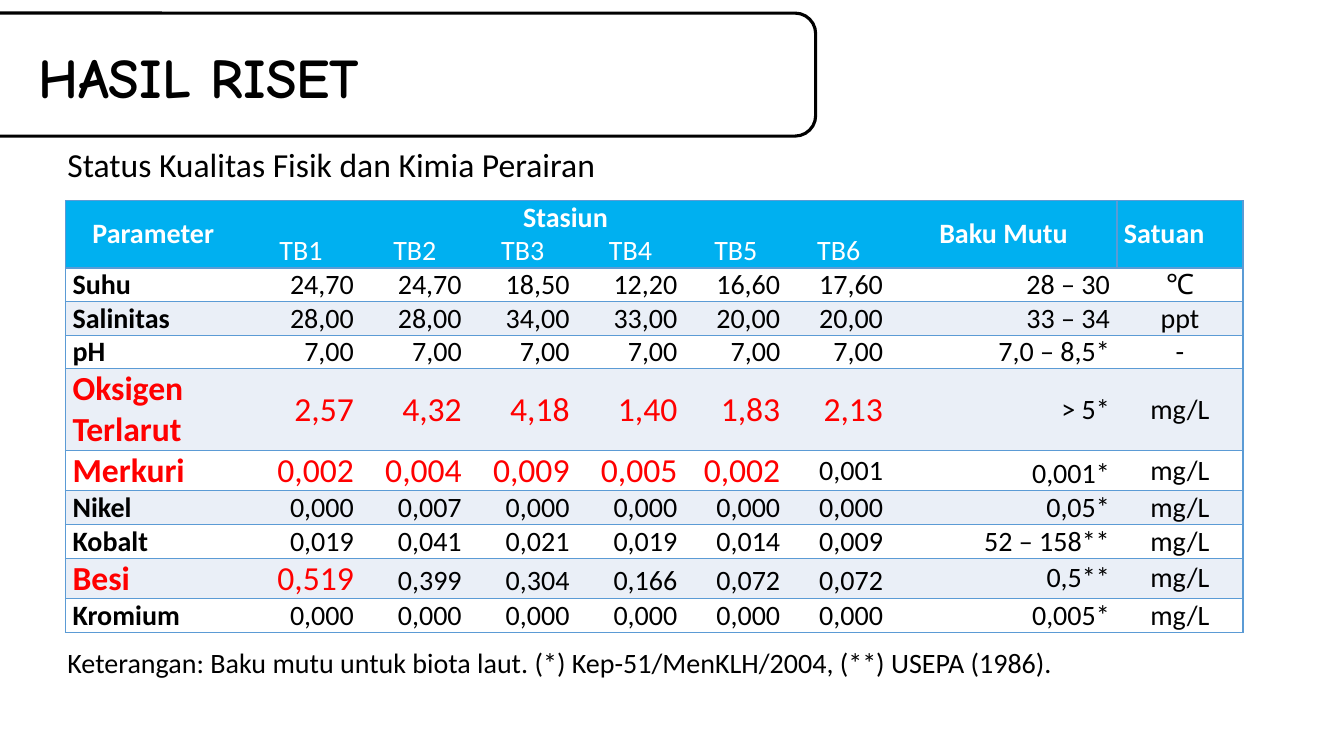
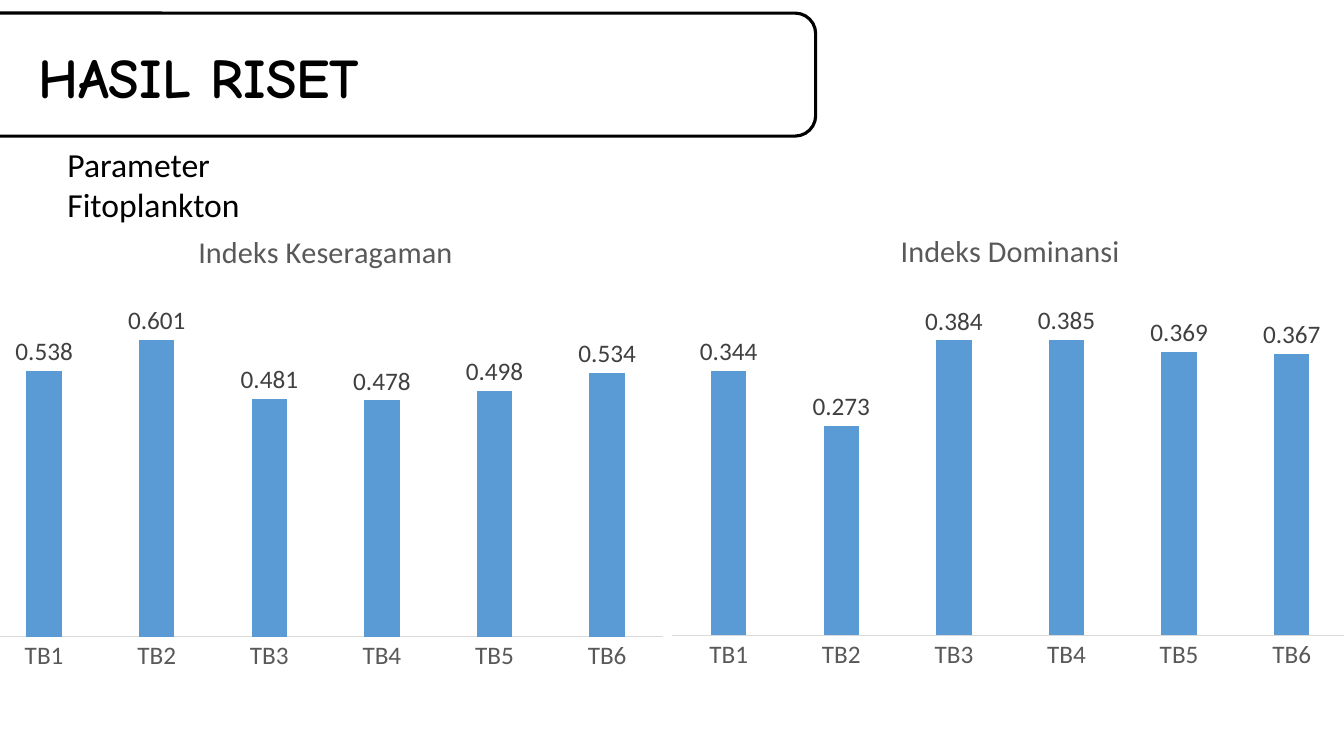
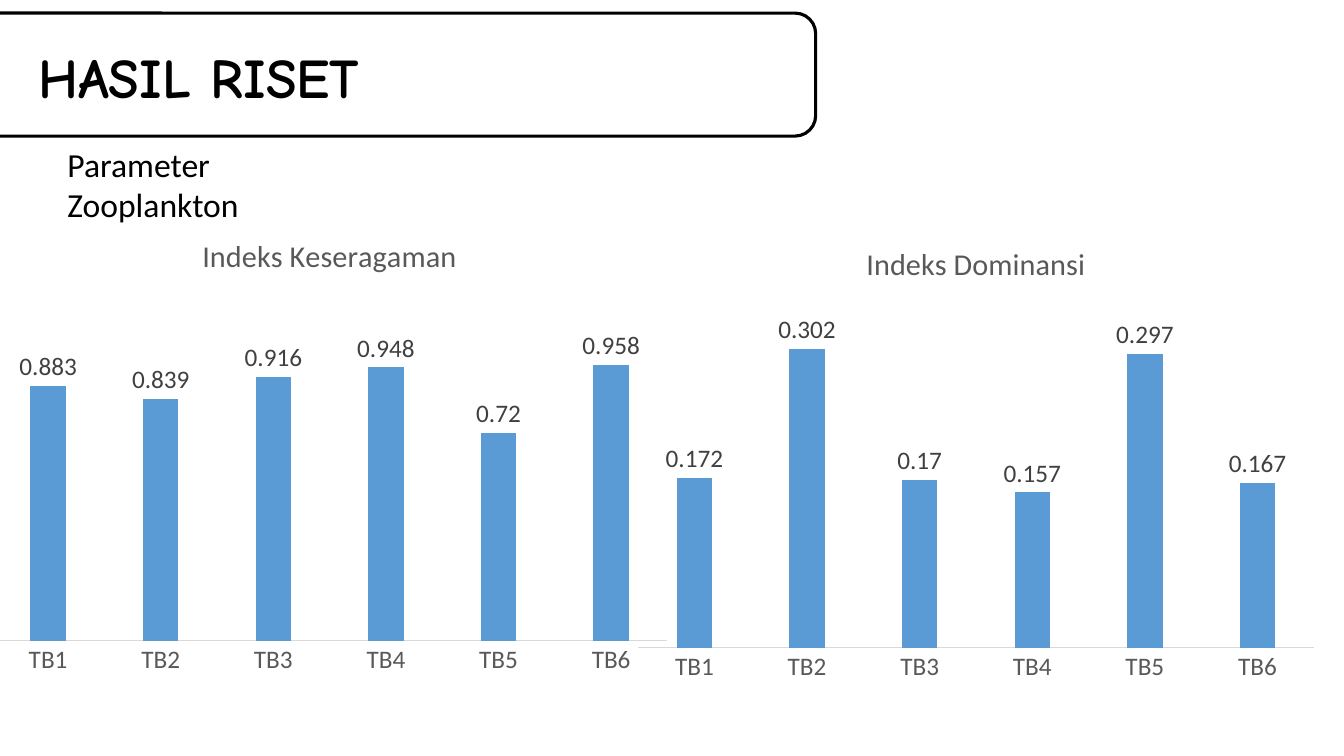
from lxml.etree import SubElement
from pptx import Presentation
from pptx.chart.data import CategoryChartData
from pptx.dml.color import RGBColor
from pptx.enum.chart import XL_CHART_TYPE, XL_LABEL_POSITION, XL_TICK_LABEL_POSITION, XL_TICK_MARK
from pptx.enum.shapes import MSO_SHAPE
from pptx.enum.text import MSO_ANCHOR, PP_ALIGN
from pptx.oxml.ns import qn
from pptx.util import Inches, Pt

BODY_FONT, TITLE_FONT = "Calibri", "Comic Neue"
BLACK, WHITE, RED = "000000", "FFFFFF", "FF0000"
HEADER_FILL, BAND_FILL, BLUE = "00B0F0", "EAEFF7", "5B9BD5"
AXIS_TEXT, LABEL_TEXT, AXIS_LINE = "595959", "404040", "D9D9D9"
PLAIN_TABLE_STYLE = "{2D5ABB26-0587-4C30-8999-92F81FD0307C}"

STATIONS = ["TB1", "TB2", "TB3", "TB4", "TB5", "TB6"]
STANDARD_COLUMN, UNIT_COLUMN = 7, 8
COLUMN_WIDTHS = [1.74, 1.19, 1.07, 1.07, 1.07, 1.02, 1.02, 2.25, 1.25]
# Name, number of leading stations in red, station values, standard, unit
PARAMETERS = [
    ("Suhu", 0, "24,70 24,70 18,50 12,20 16,60 17,60", "28 – 30", "℃"),
    ("Salinitas", 0, "28,00 28,00 34,00 33,00 20,00 20,00", "33 – 34", "ppt"),
    ("pH", 0, "7,00 7,00 7,00 7,00 7,00 7,00", "7,0 – 8,5*", "-"),
    ("Oksigen Terlarut", 6, "2,57 4,32 4,18 1,40 1,83 2,13", "> 5*", "mg/L"),
    ("Merkuri", 5, "0,002 0,004 0,009 0,005 0,002 0,001", "0,001*", "mg/L"),
    ("Nikel", 0, "0,000 0,007 0,000 0,000 0,000 0,000", "0,05*", "mg/L"),
    ("Kobalt", 0, "0,019 0,041 0,021 0,019 0,014 0,009", "52 – 158**", "mg/L"),
    ("Besi", 1, "0,519 0,399 0,304 0,166 0,072 0,072", "0,5**", "mg/L"),
    ("Kromium", 0, "0,000 0,000 0,000 0,000 0,000 0,000", "0,005*", "mg/L"),
]
# Group, then left, top, title and values of each chart
PLANKTON = [
    ("Fitoplankton", [
        (-0.26, 2.09, "Indeks Keseragaman", [0.538, 0.601, 0.481, 0.478, 0.498, 0.534]),
        (6.53, 2.08, "Indeks Dominansi", [0.344, 0.273, 0.384, 0.385, 0.369, 0.367]),
    ]),
    ("Zooplankton", [
        (-0.22, 2.13, "Indeks Keseragaman", [0.883, 0.839, 0.916, 0.948, 0.72, 0.958]),
        (6.19, 2.2, "Indeks Dominansi", [0.172, 0.302, 0.17, 0.157, 0.297, 0.167]),
    ]),
]


def color(hex_string):
    return RGBColor.from_string(hex_string)


def style_font(font, size, hex_string, bold=False, name=BODY_FONT):
    font.name, font.size, font.bold = name, Pt(size), bold
    font.color.rgb = color(hex_string)


def border_cell(cell, sides):
    """Draw a blue line on each given side, written L, R, T or B."""
    properties = cell._tc.get_or_add_tcPr()
    for index, side in enumerate(sides):
        line = properties.makeelement(qn(f"a:ln{side}"), {"w": str(Pt(1))})
        fill = SubElement(line, qn("a:solidFill"))
        SubElement(fill, qn("a:srgbClr"), {"val": BLUE})
        properties.insert(index, line)


class Deck:
    """Holds the shared style and the current slide."""

    def __init__(self):
        self.presentation = Presentation()
        self.presentation.slide_width = Inches(13.33)
        self.presentation.slide_height = Inches(7.5)
        self.slide = None

    def add_slide(self, subtitle, subtitle_width):
        self.slide = self.presentation.slides.add_slide(self.presentation.slide_layouts[6])
        band = self.slide.shapes.add_shape(
            MSO_SHAPE.ROUNDED_RECTANGLE, Inches(-1.09), Inches(0.13), Inches(9.18), Inches(1.22))
        band.shadow.inherit = False
        band.fill.background()
        band.line.color.rgb = color(BLACK)
        band.line.width = Pt(2.25)
        self.text("HASIL RISET", 0.28, 0.37, 4.09, 0.77, 40, bold=True, name=TITLE_FONT)
        self.text(subtitle, 0.57, 1.38, subtitle_width, 0.5, 24)

    def text(self, text, left, top, width, height, size, **style):
        box = self.slide.shapes.add_textbox(
            Inches(left), Inches(top), Inches(width), Inches(height))
        box.text_frame.word_wrap = True
        paragraph = box.text_frame.paragraphs[0]
        paragraph.text = text
        style_font(paragraph.font, size, BLACK, **style)

    def table(self, left, top, column_widths, row_heights):
        frame = self.slide.shapes.add_table(
            len(row_heights), len(column_widths), Inches(left), Inches(top),
            Inches(sum(column_widths)), Inches(sum(row_heights)))
        table = frame.table
        table.first_row = table.horz_banding = False
        for style_id in table._tbl.iter(qn("a:tableStyleId")):
            style_id.text = PLAIN_TABLE_STYLE
        for column, width in zip(table.columns, column_widths):
            column.width = Inches(width)
        for row, height in zip(table.rows, row_heights):
            row.height = Inches(height)
        return table

    def cell(self, cell, text, fill, hex_string=BLACK, size=20, bold=False,
             align=PP_ALIGN.CENTER, anchor=MSO_ANCHOR.MIDDLE, borders=""):
        cell.margin_left = cell.margin_right = Inches(0.07)
        cell.margin_top = cell.margin_bottom = 0
        cell.vertical_anchor = anchor
        cell.fill.solid()
        cell.fill.fore_color.rgb = color(fill)
        paragraph = cell.text_frame.paragraphs[0]
        paragraph.text = text
        paragraph.alignment = align
        style_font(paragraph.font, size, hex_string, bold)
        border_cell(cell, borders)

    def column_chart(self, left, top, title, values):
        data = CategoryChartData()
        data.categories = STATIONS
        data.add_series(title, values)
        chart = self.slide.shapes.add_chart(
            XL_CHART_TYPE.COLUMN_CLUSTERED, Inches(left), Inches(top),
            Inches(6.98), Inches(4.66), data).chart
        style_font(chart.font, 18, BLACK)
        chart.has_legend = False
        chart.has_title = True
        chart.chart_title.include_in_layout = False
        paragraph = chart.chart_title.text_frame.paragraphs[0]
        paragraph.text = title
        style_font(paragraph.font, 21.6, AXIS_TEXT)

        chart.value_axis.visible = False
        chart.value_axis.has_major_gridlines = False
        chart.value_axis.minimum_scale = 0
        axis = chart.category_axis
        axis.major_tick_mark = XL_TICK_MARK.NONE
        axis.tick_label_position = XL_TICK_LABEL_POSITION.NEXT_TO_AXIS
        axis.format.line.color.rgb = color(AXIS_LINE)
        axis.format.line.width = Pt(0.75)
        style_font(axis.tick_labels.font, 18, AXIS_TEXT)

        plot = chart.plots[0]
        plot.gap_width = 219
        plot.vary_by_categories = False
        plot.series[0].format.fill.solid()
        plot.series[0].format.fill.fore_color.rgb = color(BLUE)
        plot.has_data_labels = True
        labels = plot.data_labels
        labels.show_value = True
        labels.position = XL_LABEL_POSITION.OUTSIDE_END
        style_font(labels.font, 18, LABEL_TEXT)


def fill_header(deck, table):
    headings = [
        (0, 0, 1, 0, "Parameter", PP_ALIGN.CENTER, "LTB"),
        (0, 1, 0, 6, "Stasiun", PP_ALIGN.CENTER, "T"),
        (0, STANDARD_COLUMN, 1, STANDARD_COLUMN, "Baku Mutu", PP_ALIGN.CENTER, "TB"),
        (0, UNIT_COLUMN, 1, UNIT_COLUMN, "Satuan", PP_ALIGN.LEFT, "LRTB"),
    ]
    for row, column, last_row, last_column, text, align, borders in headings:
        cell = table.cell(row, column)
        cell.merge(table.cell(last_row, last_column))
        deck.cell(cell, text, HEADER_FILL, WHITE, bold=True, align=align, borders=borders)
    for column, station in enumerate(STATIONS, 1):
        deck.cell(table.cell(1, column), station, HEADER_FILL, WHITE, borders="B")


def fill_parameters(deck, table):
    for index, (name, red_count, values, standard, unit) in enumerate(PARAMETERS):
        texts = [name, *values.split(), standard, unit]
        for column, text in enumerate(texts):
            is_red = red_count > 0 and column <= red_count
            is_low = ((name == "Merkuri" and column == STANDARD_COLUMN)
                      or (name == "Besi" and column < STANDARD_COLUMN))
            align = {0: PP_ALIGN.LEFT, UNIT_COLUMN: PP_ALIGN.CENTER}.get(column, PP_ALIGN.RIGHT)
            deck.cell(
                table.cell(index + 2, column), text, BAND_FILL if index % 2 else WHITE,
                RED if is_red else BLACK, 24 if is_red else 20, bold=column == 0, align=align,
                anchor=MSO_ANCHOR.BOTTOM if is_low else MSO_ANCHOR.MIDDLE,
                borders={0: "LTB", UNIT_COLUMN: "RTB"}.get(column, "TB"))


def build_quality_slide(deck):
    deck.add_slide("Status Kualitas Fisik dan Kimia Perairan", 5.6)
    special_heights = {"Oksigen Terlarut": 0.81, "Merkuri": 0.4, "Besi": 0.4}
    heights = [0.33, 0.33] + [special_heights.get(row[0], 0.33) for row in PARAMETERS]
    table = deck.table(0.65, 1.99, COLUMN_WIDTHS, heights)
    fill_header(deck, table)
    fill_parameters(deck, table)
    deck.text("Keterangan: Baku mutu untuk biota laut. (*) Kep-51/MenKLH/2004, (**) USEPA (1986).",
              0.57, 6.35, 10.48, 0.44, 20)


def main():
    deck = Deck()
    build_quality_slide(deck)
    for group, charts in PLANKTON:
        deck.add_slide(f"Parameter {group}", 3)
        for chart in charts:
            deck.column_chart(*chart)
    deck.presentation.save("out.pptx")


if __name__ == "__main__":
    main()
